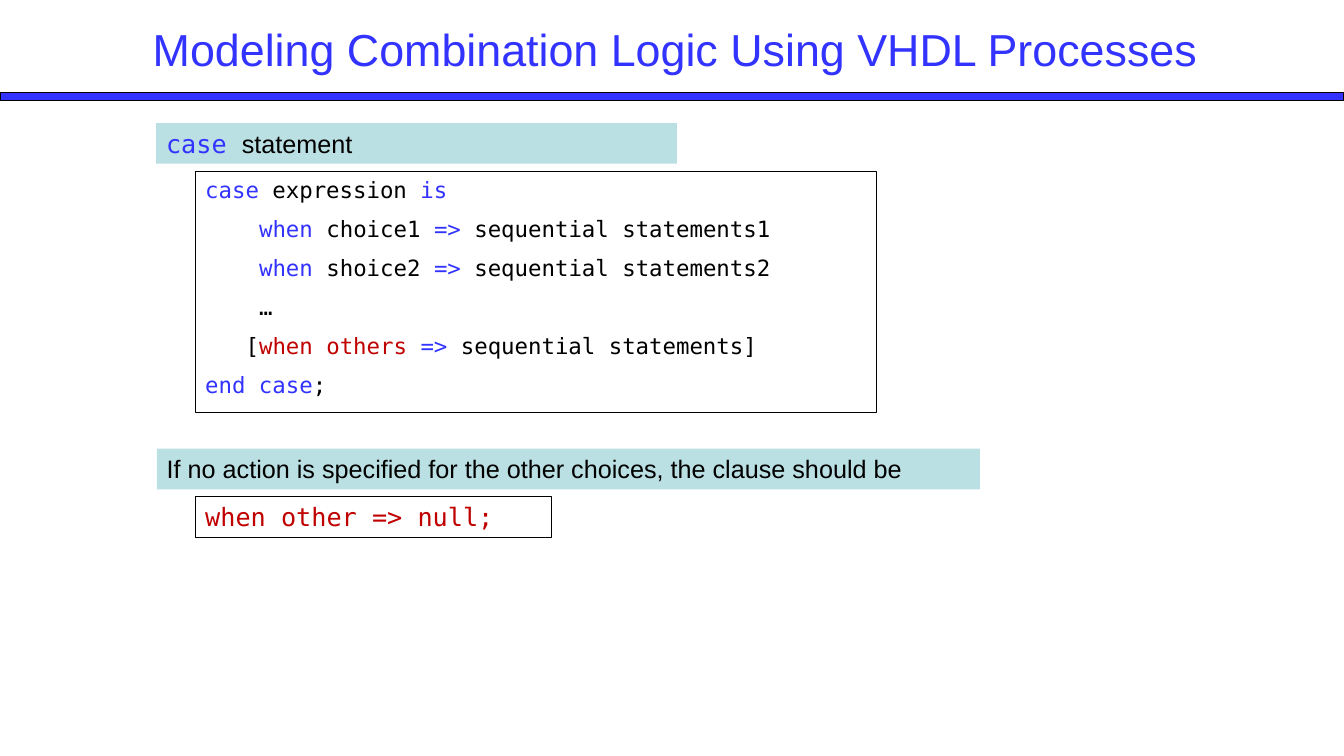
import dataclasses

import pptx
import pptx.dml.color
import pptx.enum.shapes
import pptx.enum.text
import pptx.util

Pt = pptx.util.Pt
Color = pptx.dml.color.RGBColor.from_string


@dataclasses.dataclass(frozen=True)
class Theme:
    blue: str = "3333FF"
    red: str = "C00000"
    black: str = "000000"
    band: str = "BBE0E3"
    sans: str = "Arial"
    mono: str = "DejaVu Sans Mono"
    title_size: float = 32
    text_size: float = 18
    code_size: float = 16
    code_column: float = 9.63  # width of one code character


THEME = Theme()

# Each code line: indent in characters, then (text, colour) spans
CASE_SYNTAX = [
    (0, [("case", THEME.blue), (" expression ", THEME.black), ("is", THEME.blue)]),
    *[
        (4, [("when ", THEME.blue), (choice + " ", THEME.black), ("=>", THEME.blue),
             (f" sequential statements{number}", THEME.black)])
        for number, choice in enumerate(("choice1", "shoice2"), 1)
    ],
    (4, [("…", THEME.black)]),
    (3, [("[", THEME.black), ("when others ", THEME.red), ("=>", THEME.blue),
         (" sequential statements]", THEME.black)]),
    (0, [("end case", THEME.blue), (";", THEME.black)]),
]


def apply_format(target, values):
    for name, value in values.items():
        setattr(target, name, value)


def add_span(para, text, color, font, size):
    span = para.add_run()
    span.text = text
    apply_format(span.font, {"name": font, "size": Pt(size)})
    span.font.color.rgb = Color(color)


def add_box(page, left, top, width, height, fill=None, line=None):
    box = page.shapes.add_shape(
        pptx.enum.shapes.MSO_SHAPE.RECTANGLE, Pt(left), Pt(top), Pt(width), Pt(height))
    box.shadow.inherit = False
    if fill:
        box.fill.solid()
        box.fill.fore_color.rgb = Color(fill)
    else:
        box.fill.background()
    if line:
        box.line.color.rgb = Color(line)
        box.line.width = Pt(0.75)
    else:
        box.line.fill.background()
    apply_format(box.text_frame, {
        "word_wrap": True,
        "vertical_anchor": pptx.enum.text.MSO_ANCHOR.TOP,
    })
    box.text_frame.paragraphs[0].alignment = pptx.enum.text.PP_ALIGN.LEFT
    return box


def add_heading(page, left, top, width, spans):
    box = add_box(page, left, top, width, 29, fill=THEME.band)
    for text, color, font in spans:
        add_span(box.text_frame.paragraphs[0], text, color, font, THEME.text_size)


def add_code(page, left, top, width, height, lines, size):
    frame = add_box(page, left, top, width, height, line=THEME.black).text_frame
    for index, (indent, spans) in enumerate(lines):
        para = frame.add_paragraph() if index else frame.paragraphs[0]
        apply_format(para, {
            "alignment": pptx.enum.text.PP_ALIGN.LEFT,
            "space_before": Pt(8.7 if index else 0),
        })
        if indent:
            properties = para._p.get_or_add_pPr()
            properties.set("marL", str(Pt(indent * THEME.code_column)))
            properties.set("indent", "0")
        for text, color in spans:
            add_span(para, text, color, THEME.mono, size)


def set_title(page, text):
    title = page.shapes.title
    apply_format(title, {
        "left": Pt(37.5), "top": Pt(9.5), "width": Pt(890), "height": Pt(51)})
    apply_format(title.text_frame, {
        "word_wrap": True,
        "auto_size": pptx.enum.text.MSO_AUTO_SIZE.NONE,
        "vertical_anchor": pptx.enum.text.MSO_ANCHOR.MIDDLE,
    })
    para = title.text_frame.paragraphs[0]
    para.alignment = pptx.enum.text.PP_ALIGN.CENTER
    add_span(para, text, THEME.blue, THEME.sans, THEME.title_size)


def main():
    deck = pptx.Presentation()
    apply_format(deck, {"slide_width": Pt(960), "slide_height": Pt(540)})
    page = deck.slides.add_slide(deck.slide_layouts[5])

    # Title and rule
    set_title(page, "Modeling Combination Logic Using VHDL Processes")
    add_box(page, 0, 66, 960, 6, fill=THEME.blue, line=THEME.black)

    # Case statement syntax
    add_heading(page, 111.5, 88, 372, [
        ("case ", THEME.blue, THEME.mono), ("statement", THEME.black, THEME.sans)])
    add_code(page, 139.5, 122.3, 486.5, 172.2, CASE_SYNTAX, THEME.code_size)

    # Clause for the remaining choices
    add_heading(page, 112, 320.5, 588, [
        ("If no action is specified for the other choices, the clause should be",
         THEME.black, THEME.sans)])
    add_code(page, 139.5, 354.8, 254.5, 29.2,
             [(0, [("when other => null;", THEME.red)])], THEME.text_size)

    deck.save("out.pptx")


if __name__ == "__main__":
    main()
